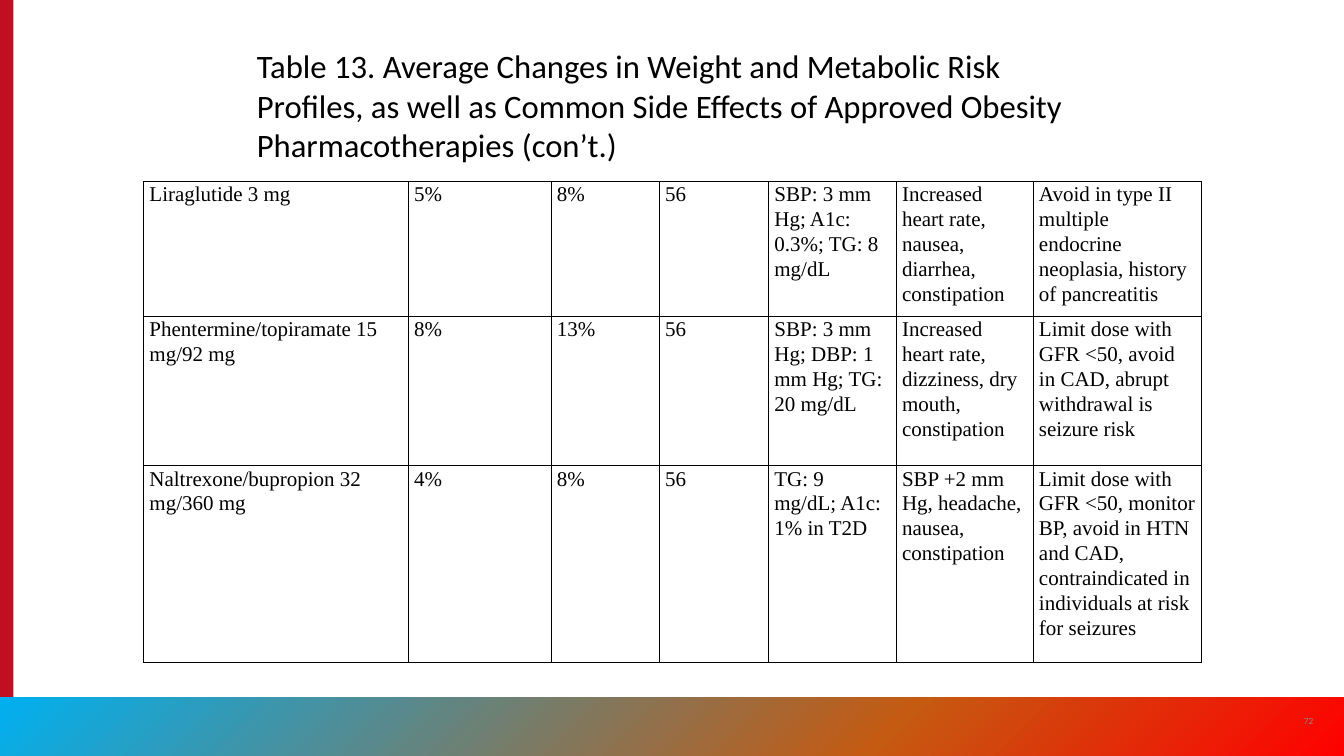
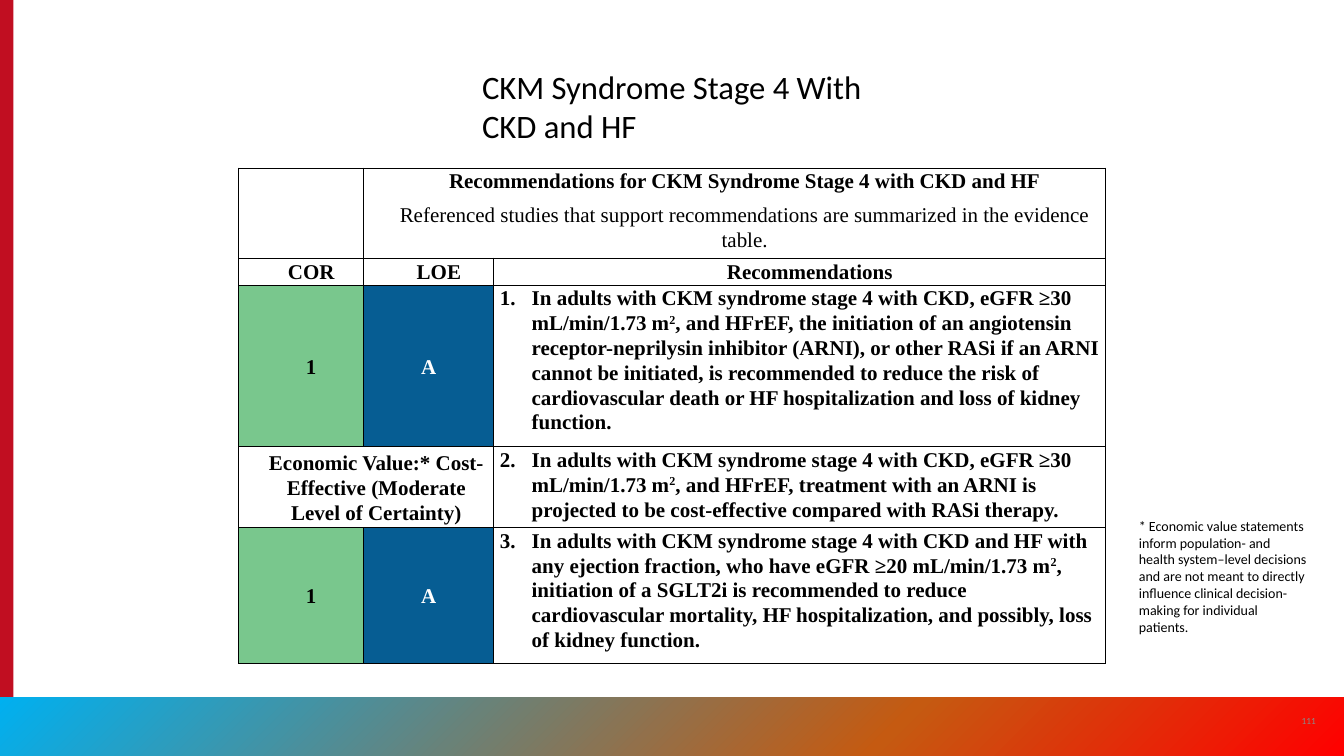
import copy

import pptx
import pptx.dml.color
import pptx.enum.shapes
import pptx.enum.text
import pptx.oxml.ns
import pptx.oxml.xmlchemy
import pptx.util

Inches, Pt = pptx.util.Inches, pptx.util.Pt
qn = pptx.oxml.ns.qn
ALIGN, ANCHOR = pptx.enum.text.PP_ALIGN, pptx.enum.text.MSO_ANCHOR

COLORS = {
    "stripe": "C10E21", "text": "000000", "number": "8A8B8A",
    "class": "79C78D", "evidence": "065D93", "on_dark": "FFFFFF",
}
BAND_STOPS = [(0, "00B0F0"), (0.66, "C55A11"), (1, "FF0000")]
SANS, SERIF = "Calibri", "Times New Roman"


def rgb(value):
    return pptx.dml.color.RGBColor.from_string(value)


def apply(target, values):
    for name, value in values.items():
        setattr(target, name, value)


def child(parent, tag, **attrs):
    el = pptx.oxml.xmlchemy.OxmlElement(tag)
    for name, value in attrs.items():
        el.set(name, str(value))
    parent.append(el)
    return el


class Deck:
    """Holds the shared style and the current slide."""

    def __init__(self):
        self.prs = pptx.Presentation()
        apply(self.prs, {"slide_width": Inches(16), "slide_height": Inches(9)})
        self.s = None

    # Slide frame: stripe, gradient band, page number and title
    def slide(self, number, title, box):
        self.s = self.prs.slides.add_slide(self.prs.slide_layouts[6])
        self.rect(0, 0, 0.16, 9, COLORS["stripe"])
        self.band()
        self.text(number, (15.34, 8.34, 0.48, 0.48), 8, "number",
                  {"alignment": ALIGN.CENTER}, ANCHOR.MIDDLE)
        self.text(title, box, 28)

    def rect(self, x, y, w, h, color=None):
        sp = self.s.shapes.add_shape(
            pptx.enum.shapes.MSO_SHAPE.RECTANGLE, *map(Inches, (x, y, w, h)))
        sp.shadow.inherit = False
        sp.line.fill.background()
        if color:
            sp.fill.solid()
            sp.fill.fore_color.rgb = rgb(color)
        return sp

    def band(self):
        sp = self.rect(0, 8.3, 16, 0.7)
        sp.fill.gradient()
        sp.fill.gradient_angle = 315
        stops = sp._element.spPr.find(".//" + qn("a:gsLst"))
        stops.append(copy.deepcopy(stops[0]))
        for stop, (position, color) in zip(sp.fill.gradient_stops, BAND_STOPS):
            apply(stop, {"position": position})
            stop.color.rgb = rgb(color)

    def text(self, text, box, size, color="text", fmt=None, anchor=ANCHOR.TOP):
        tf = self.s.shapes.add_textbox(*map(Inches, box)).text_frame
        apply(tf, {"word_wrap": True, "vertical_anchor": anchor})
        self.paragraph(tf.paragraphs[0], text, fmt or {},
                       {"name": SANS, "size": Pt(size)}, color)

    # Text between ^ marks is superscript
    def paragraph(self, p, text, fmt, font, color="text"):
        apply(p, fmt)
        for i, part in enumerate(text.split("^")):
            r = p.add_run()
            r.text = part
            apply(r.font, font)
            r.font.color.rgb = rgb(COLORS[color])
            if i % 2:
                r.font._element.set("baseline", "30000")

    def table(self, x, y, cols, rows):
        tb = self.s.shapes.add_table(
            len(rows), len(cols), Inches(x), Inches(y),
            Inches(sum(cols)), Inches(sum(rows))).table
        apply(tb, {"first_row": False, "horz_banding": False})
        for col, width in zip(tb.columns, cols):
            col.width = Inches(width)
        for row, height in zip(tb.rows, rows):
            row.height = Inches(height)
            for cell in row.cells:
                self.borders(cell)
                cell.fill.background()
        return tb

    def borders(self, cell):
        tcPr = cell._tc.get_or_add_tcPr()
        for side in "LRTB":
            ln = child(tcPr, "a:ln" + side, w=Pt(1))
            child(child(ln, "a:solidFill"), "a:srgbClr", val=COLORS["text"])

    def cell(self, cell, *texts, bold=(), align=ALIGN.LEFT, after=0, indent=0,
             number=None, anchor=ANCHOR.TOP, fill=None, color="text"):
        apply(cell, {"margin_left": Inches(0.07), "margin_right": Inches(0.07),
                     "margin_top": 0, "margin_bottom": 0,
                     "vertical_anchor": anchor})
        if fill:
            cell.fill.solid()
            cell.fill.fore_color.rgb = rgb(COLORS[fill])
        tf = cell.text_frame
        for i, text in enumerate(texts):
            p = tf.add_paragraph() if i else tf.paragraphs[0]
            pPr = p._p.get_or_add_pPr()
            pPr.set("marL", str(Inches(indent)))
            if number:
                pPr.set("indent", str(-Inches(indent)))
                child(pPr, "a:buFont", typeface="+mj-lt")
                child(pPr, "a:buAutoNum", type="arabicPeriod", startAt=number)
            self.paragraph(
                p, text,
                {"alignment": align, "line_spacing": 1.07, "space_after": Pt(after)},
                {"name": SERIF, "size": Pt(18), "bold": i in bold}, color)


DRUGS = [
    ["Liraglutide 3 mg", "5%", "8%", "56",
     "SBP: 3 mm Hg; A1c: 0.3%; TG: 8 mg/dL",
     "Increased heart rate, nausea, diarrhea, constipation",
     "Avoid in type II multiple endocrine neoplasia, history of pancreatitis"],
    ["Phentermine/topiramate 15 mg/92 mg", "8%", "13%", "56",
     "SBP: 3 mm Hg; DBP: 1 mm Hg; TG: 20 mg/dL",
     "Increased heart rate, dizziness, dry mouth, constipation",
     "Limit dose with GFR <50, avoid in CAD, abrupt withdrawal is seizure risk"],
    ["Naltrexone/bupropion 32 mg/360 mg", "4%", "8%", "56",
     "TG: 9 mg/dL; A1c: 1% in T2D",
     "SBP +2 mm Hg, headache, nausea, constipation",
     "Limit dose with GFR <50, monitor BP, avoid in HTN and CAD, "
     "contraindicated in individuals at risk for seizures"],
]
RECOMMENDATIONS = [
    "In adults with CKM syndrome stage 4 with CKD, eGFR ≥30 mL/min/1.73 m^2^, and HFrEF, "
    "the initiation of an angiotensin receptor-neprilysin inhibitor (ARNI), or other RASi "
    "if an ARNI cannot be initiated, is recommended to reduce the risk of cardiovascular "
    "death or HF hospitalization and loss of kidney function.",
    "In adults with CKM syndrome stage 4 with CKD, eGFR ≥30 mL/min/1.73 m^2^, and HFrEF, "
    "treatment with an ARNI is projected to be cost-effective compared with RASi therapy.",
    "In adults with CKM syndrome stage 4 with CKD and HF with any ejection fraction, who "
    "have eGFR ≥20 mL/min/1.73 m^2^, initiation of a SGLT2i is recommended to reduce "
    "cardiovascular mortality, HF hospitalization, and possibly, loss of kidney function.",
]


def drug_slide(deck):
    deck.slide("72", "Table 13. Average Changes in Weight and Metabolic Risk Profiles, "
               "as well as Common Side Effects of Approved Obesity Pharmacotherapies "
               "(con’t.)", (2.96, 0.5, 10.07, 1.51))
    tb = deck.table(1.71, 2.16, [3.15, 1.7, 1.29, 1.3, 1.52, 1.63, 2.01],
                    [1.6, 1.78, 2.34])
    for i, drug in enumerate(DRUGS):
        for j, text in enumerate(drug):
            deck.cell(tb.cell(i, j), text)


def recommendation_slide(deck):
    deck.slide("111", "CKM Syndrome Stage 4 With CKD and HF", (5.64, 0.75, 4.73, 1.04))
    tb = deck.table(2.84, 2, [1.49, 1.55, 7.28], [1.07, 0.32, 1.92, 0.96, 1.61])
    centered = {"align": ALIGN.CENTER, "after": 8, "indent": 0.24, "bold": (0,)}
    middle = {**centered, "anchor": ANCHOR.MIDDLE}

    # Headings
    tb.cell(0, 1).merge(tb.cell(0, 2))
    deck.cell(tb.cell(0, 1), "Recommendations for CKM Syndrome Stage 4 with CKD and HF",
              "Referenced studies that support recommendations are summarized in the "
              "evidence table.", **centered)
    for j, heading in enumerate(["COR", "LOE", "Recommendations"]):
        deck.cell(tb.cell(1, j), heading, **middle)

    # Ratings
    for i in (2, 4):
        deck.cell(tb.cell(i, 0), "1", fill="class", **middle)
        deck.cell(tb.cell(i, 1), "A", fill="evidence", color="on_dark",
                  **{**middle, "indent": 0, "after": 0})
    tb.cell(3, 0).merge(tb.cell(3, 1))
    deck.cell(tb.cell(3, 0),
              "Economic Value:* Cost-Effective (Moderate Level of Certainty)", **middle)

    # Numbered recommendations and footnote
    for n, text in enumerate(RECOMMENDATIONS, 1):
        deck.cell(tb.cell(n + 1, 2), text, number=n, indent=0.38, after=8, bold=(0,))
    deck.text("* Economic value statements inform population- and health system–level "
              "decisions and are not meant to directly influence clinical "
              "decision-making for individual patients.", (13.46, 6.11, 2.21, 1.72), 12)


def main():
    deck = Deck()
    drug_slide(deck)
    recommendation_slide(deck)
    deck.prs.save("out.pptx")


if __name__ == "__main__":
    main()
